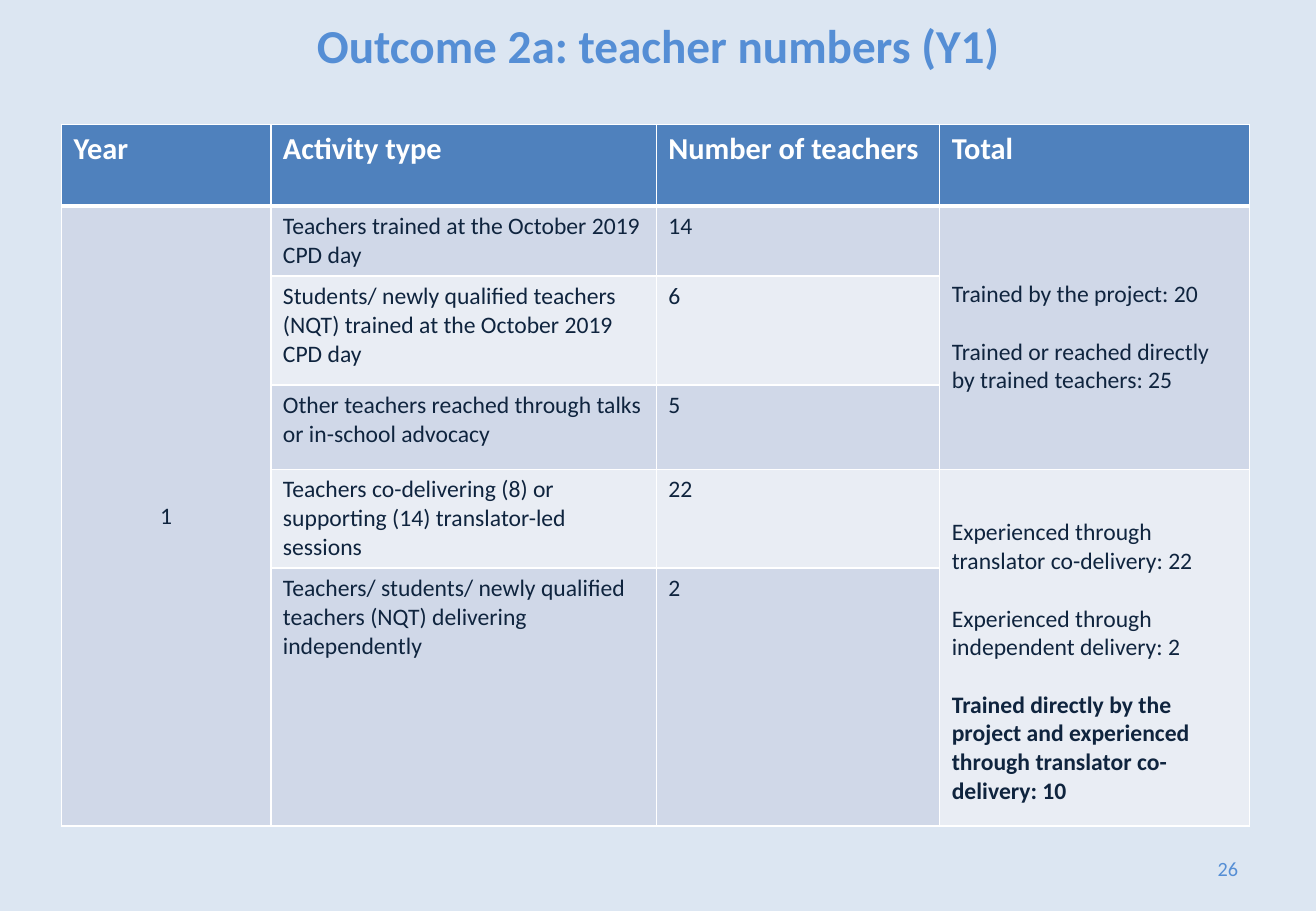
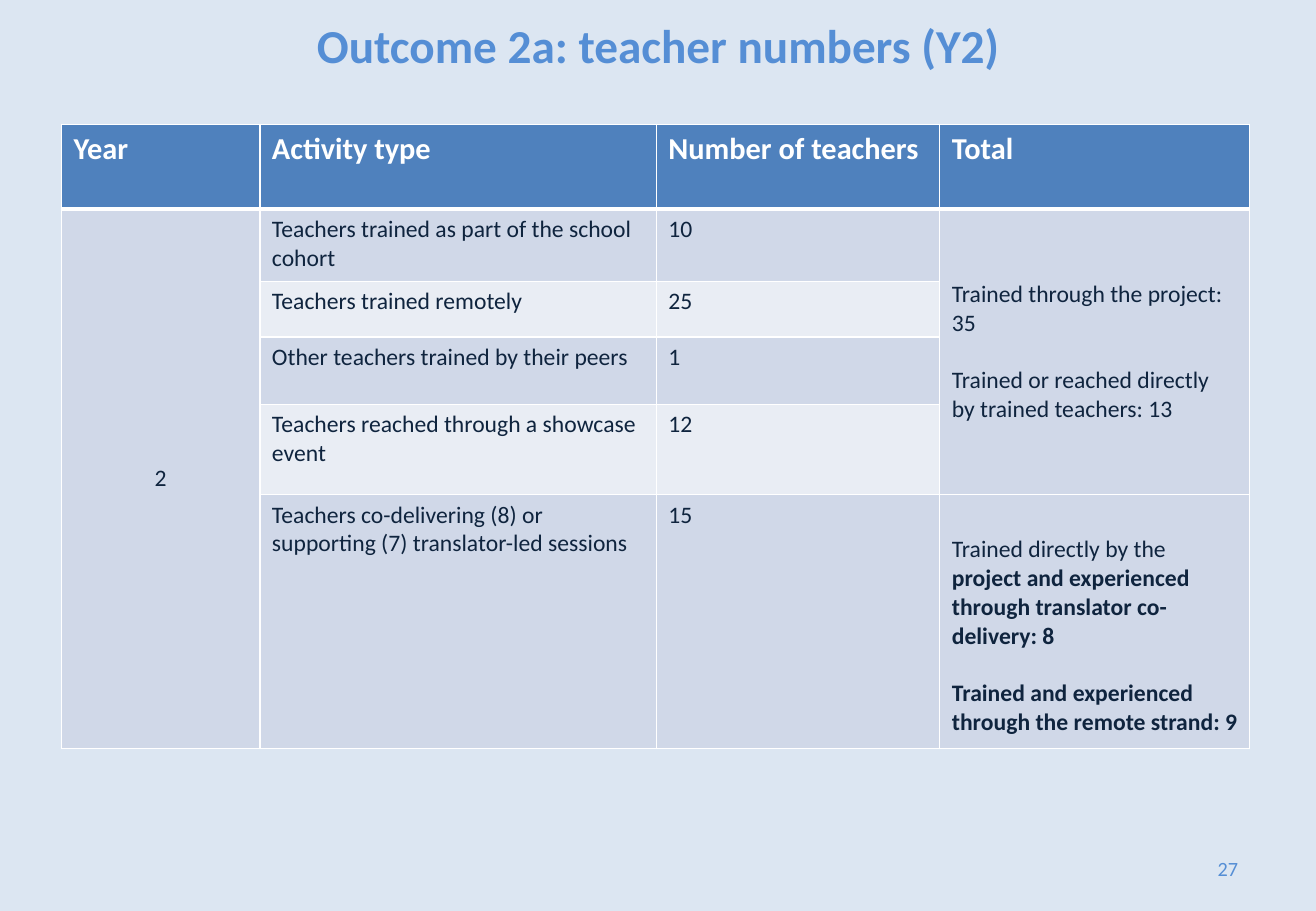
from lxml import etree
from pptx import Presentation
from pptx.dml.color import RGBColor
from pptx.enum.text import MSO_ANCHOR as Anchor, PP_ALIGN as Align
from pptx.oxml.ns import qn
from pptx.util import Pt

COLORS = {
    "background": "DCE6F2",
    "accent": "558ED5",
    "header": "4F81BD",
    "dark_band": "D0D8E8",
    "light_band": "E9EDF4",
    "ink": "0F243E",
    "white": "FFFFFF",
}
FONT = "Calibri"
LINE_GAP = 17  # one line of 14 pt text
HEADINGS = ["Year", "Activity type", "Number of teachers", "Total"]


def color(name):
    return RGBColor.from_string(COLORS[name])


def write(frame, paragraphs, size=14, ink="ink", bold=False,
          align=Align.LEFT, anchor=Anchor.TOP, gap=0):
    """Fill a frame from a string, or from paragraphs that are lists of (text, bold) runs."""
    if isinstance(paragraphs, str):
        paragraphs = [[(paragraphs, bold)]]
    frame.word_wrap = True
    frame.vertical_anchor = anchor
    for index, runs in enumerate(paragraphs):
        paragraph = frame.add_paragraph() if index else frame.paragraphs[0]
        paragraph.alignment = align
        paragraph.space_before = Pt(gap if index else 0)
        for text, is_bold in runs:
            run = paragraph.add_run()
            run.text = text
            run.font.name = FONT
            run.font.size = Pt(size)
            run.font.bold = is_bold
            run.font.color.rgb = color(ink)


def style_cell(cell, fill, top=1, bottom=1):
    """Give a cell white borders and a solid fill."""
    cell.fill.solid()
    cell.fill.fore_color.rgb = color(fill)
    properties = cell._tc.get_or_add_tcPr()
    sides = {"a:lnL": 1, "a:lnR": 1, "a:lnT": top, "a:lnB": bottom}
    for position, (tag, width) in enumerate(sides.items()):
        line = etree.Element(qn(tag), w=str(Pt(width)))
        solid = etree.SubElement(line, qn("a:solidFill"))
        etree.SubElement(solid, qn("a:srgbClr"), val=COLORS["white"])
        properties.insert(position, line)


class Deck:
    def __init__(self):
        self.presentation = Presentation()
        self.presentation.slide_width = Pt(780)
        self.presentation.slide_height = Pt(540)
        self.slide = None

    def add_slide(self, title, number):
        self.slide = self.presentation.slides.add_slide(self.presentation.slide_layouts[6])
        self.slide.background.fill.solid()
        self.slide.background.fill.fore_color.rgb = color("background")
        self.add_text(title, 39, 0, 702, 52.5, size=28, bold=True, align=Align.CENTER)
        self.add_text(number, 558.5, 500.5, 182.5, 29, size=12, align=Align.RIGHT)

    def add_text(self, text, left, top, width, height, **style):
        box = self.slide.shapes.add_textbox(Pt(left), Pt(top), Pt(width), Pt(height))
        write(box.text_frame, text, ink="accent", anchor=Anchor.MIDDLE, **style)

    def add_teacher_table(self, year, year_width, heights, activities, totals):
        widths = [year_width, 352.5 - year_width, 168, 183.75]
        table = self.slide.shapes.add_table(
            len(heights), len(widths), Pt(36.5), Pt(73.75),
            Pt(sum(widths)), Pt(sum(heights))).table
        table.horz_banding = False
        for column, width in zip(table.columns, widths):
            column.width = Pt(width)
        for row, height in zip(table.rows, heights):
            row.height = Pt(height)

        # Header row
        for column, heading in enumerate(HEADINGS):
            cell = table.cell(0, column)
            style_cell(cell, "header", bottom=3)
            write(cell.text_frame, heading, size=18, ink="white", bold=True)

        # Banded activity rows; the outer columns take the band of their first row
        last = len(activities)
        starts = [start for start, _, _ in totals]
        for row, (activity, count) in enumerate(activities, 1):
            total_start = max(start for start in starts if start <= row)
            for column, band_row in enumerate([1, row, row, total_start]):
                fill = "dark_band" if band_row % 2 else "light_band"
                style_cell(table.cell(row, column), fill, top=3 if row == 1 else 1)
            write(table.cell(row, 1).text_frame, activity)
            write(table.cell(row, 2).text_frame, count)

        # Year and totals
        year_cell = table.cell(1, 0)
        year_cell.merge(table.cell(last, 0))
        write(year_cell.text_frame, year, align=Align.CENTER)
        year_cell.vertical_anchor = Anchor.MIDDLE
        for start, end, paragraphs in totals:
            cell = table.cell(start, 3)
            if end > start:
                cell.merge(table.cell(end, 3))
            write(cell.text_frame, paragraphs, gap=LINE_GAP)
            cell.vertical_anchor = Anchor.MIDDLE
            if start > 1:
                cell.margin_top = Pt(3.6 + LINE_GAP)


def main():
    deck = Deck()

    # Year 1
    deck.add_slide("Outcome 2a: teacher numbers (Y1)", "26")
    deck.add_teacher_table(
        "1", 124, [48.5, 41.5, 64.5, 50, 58.5, 153],
        [("Teachers trained at the October 2019 CPD day", "14"),
         ("Students/ newly qualified teachers (NQT) trained at the October 2019 CPD day", "6"),
         ("Other teachers reached through talks or in-school advocacy", "5"),
         ("Teachers co-delivering (8) or supporting (14) translator-led sessions", "22"),
         ("Teachers/ students/ newly qualified teachers (NQT) delivering independently", "2")],
        [(1, 3, [[("Trained by the project: 20", False)],
                 [("Trained or reached directly by trained teachers: 25", False)]]),
         (4, 5, [[("Experienced through translator co-delivery: 22", False)],
                 [("Experienced through independent delivery: 2", False)],
                 [("Trained directly by the project and experienced through "
                   "translator co-delivery: 10", True)]])])

    # Year 2
    deck.add_slide("Outcome 2a: teacher numbers (Y2)", "27")
    deck.add_teacher_table(
        "2", 117.5, [50, 43, 33, 40, 53.5, 150.5],
        [("Teachers trained as part of the school cohort", "10"),
         ("Teachers trained remotely", "25"),
         ("Other teachers trained by their peers", "1"),
         ("Teachers reached through a showcase event", "12"),
         ("Teachers co-delivering (8) or supporting (7) translator-led sessions", "15")],
        [(1, 4, [[("Trained through the project: 35", False)],
                 [("Trained or reached directly by trained teachers: 13", False)]]),
         (5, 5, [[("Trained directly by the ", False),
                  ("project and experienced through translator co-delivery: 8", True)],
                 [("Trained and experienced through the remote strand: 9", True)]])])

    deck.presentation.save("out.pptx")


if __name__ == "__main__":
    main()
